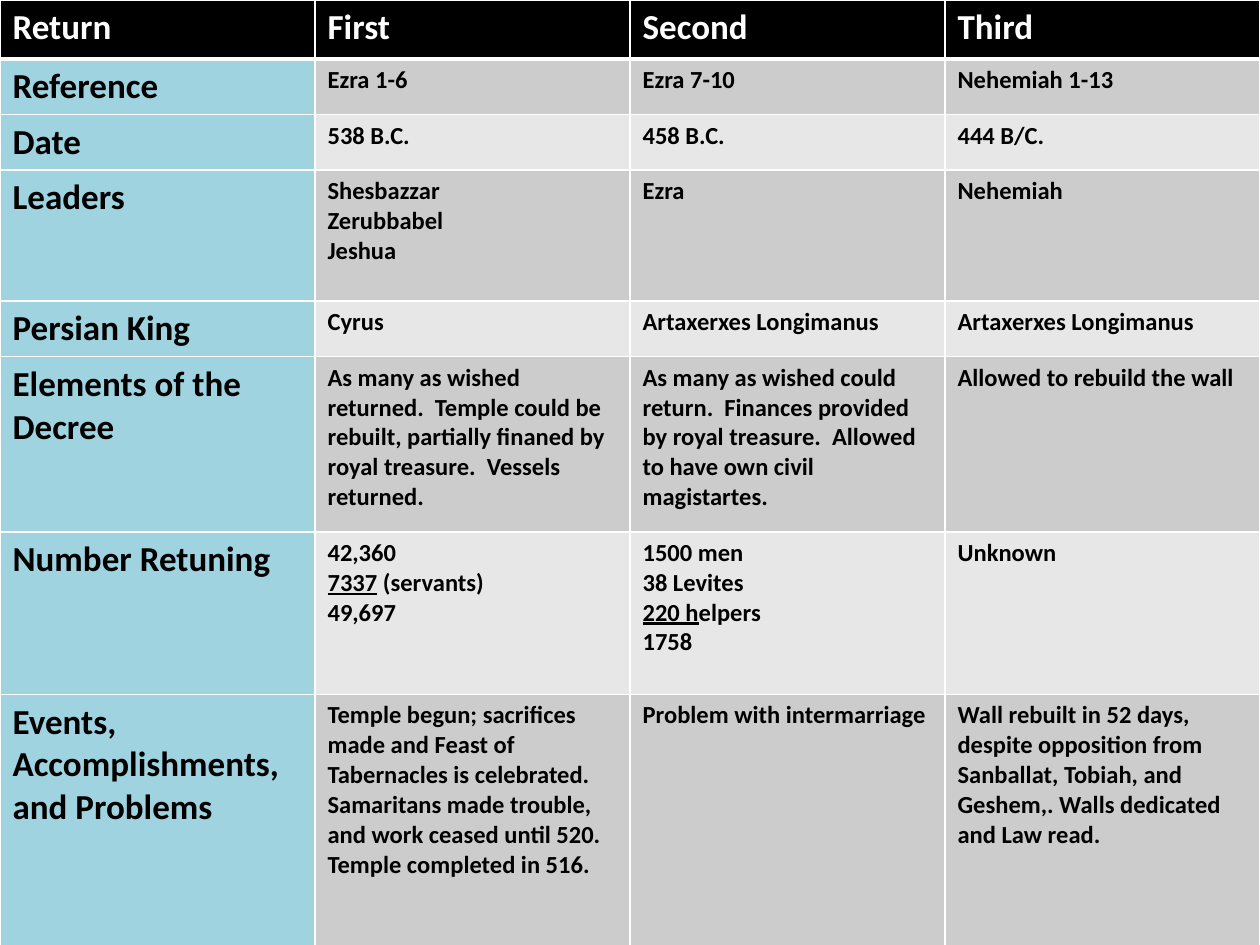
from lxml import etree
from pptx import Presentation
from pptx.dml.color import RGBColor
from pptx.oxml.ns import qn
from pptx.util import Inches, Pt

WHITE, BLACK = "FFFFFF", "000000"
LABEL_FILL, BAND_FILLS = "A0D3E0", ("CCCCCC", "E7E7E7")
ROW_HEIGHTS = (0.47, 0.44, 0.44, 1.04, 0.44, 1.39, 1.29, 2.01)
ROWS = (
    ("Return", "First", "Second", "Third"),
    ("Reference", "Ezra 1-6", "Ezra 7-10", "Nehemiah 1-13"),
    ("Date", "538 B.C.", "458 B.C.", "444 B/C."),
    ("Leaders", "Shesbazzar\nZerubbabel\nJeshua", "Ezra", "Nehemiah"),
    ("Persian King", "Cyrus", "Artaxerxes Longimanus", "Artaxerxes Longimanus"),
    ("Elements of the Decree",
     "As many as wished returned.  Temple could be rebuilt, partially finaned "
     "by royal treasure.  Vessels returned.",
     "As many as wished could return.  Finances provided by royal treasure.  "
     "Allowed to have own civil magistartes.",
     "Allowed to rebuild the wall"),
    ("Number Retuning", "42,360\n_7337_ (servants)\n49,697",
     "1500 men\n38 Levites\n_220 h_elpers\n1758", "Unknown"),
    ("Events, Accomplishments, and Problems",
     "Temple begun; sacrifices made and Feast of  Tabernacles is celebrated.  "
     "Samaritans made trouble, and work ceased until 520.  Temple completed in 516.",
     "Problem with intermarriage",
     "Wall rebuilt in 52 days, despite opposition from Sanballat, Tobiah, and "
     "Geshem,. Walls dedicated and Law read."),
)


def color(value):
    return RGBColor.from_string(value)


def write_text(cell, content, size, text_color):
    """Write one paragraph per line; words between underscores are underlined."""
    cell.text_frame.text = content.replace("_", "")
    for paragraph, line in zip(cell.text_frame.paragraphs, content.split("\n")):
        if "_" in line:
            paragraph.clear()
            for index, part in enumerate(line.split("_")):
                if part:
                    run = paragraph.add_run()
                    run.text = part
                    run.font.underline = index % 2 == 1
        for run in paragraph.runs:
            font = run.font
            font.name, font.size, font.bold = "Calibri", Pt(size), True
            font.color.rgb = color(text_color)


def set_borders(cell, top, bottom):
    """Draw white cell edges, with top and bottom widths in points."""
    properties = cell._tc.get_or_add_tcPr()
    edges = (("L", 1), ("R", 1), ("T", top), ("B", bottom))
    for position, (side, width) in enumerate(edges):
        line = etree.Element(qn("a:ln" + side), w=str(Pt(width)))
        fill = etree.SubElement(line, qn("a:solidFill"))
        etree.SubElement(fill, qn("a:srgbClr"), val=WHITE)
        properties.insert(position, line)


def add_returns_table(slide, left, top, width):
    column_count = len(ROWS[0])
    frame = slide.shapes.add_table(len(ROWS), column_count, left, top,
                                   width, Inches(sum(ROW_HEIGHTS)))
    table = frame.table
    for column in table.columns:
        column.width = width // column_count
    for row_index, (row, height) in enumerate(zip(ROWS, ROW_HEIGHTS)):
        table.rows[row_index].height = Inches(height)
        is_header = row_index == 0
        for column_index, content in enumerate(row):
            cell = table.cell(row_index, column_index)
            is_label = column_index == 0
            if is_header:
                fill = BLACK
            else:
                fill = LABEL_FILL if is_label else BAND_FILLS[(row_index - 1) % 2]
            cell.fill.solid()
            cell.fill.fore_color.rgb = color(fill)
            write_text(cell, content, 20 if is_header or is_label else 14,
                       WHITE if is_header else BLACK)
            set_borders(cell, 3 if row_index == 1 else 1, 3 if is_header else 1)


def main():
    presentation = Presentation()
    presentation.slide_width, presentation.slide_height = Inches(10), Inches(7.5)
    slide = presentation.slides.add_slide(presentation.slide_layouts[6])
    add_returns_table(slide, 0, 0, presentation.slide_width)
    presentation.save("out.pptx")


if __name__ == "__main__":
    main()
